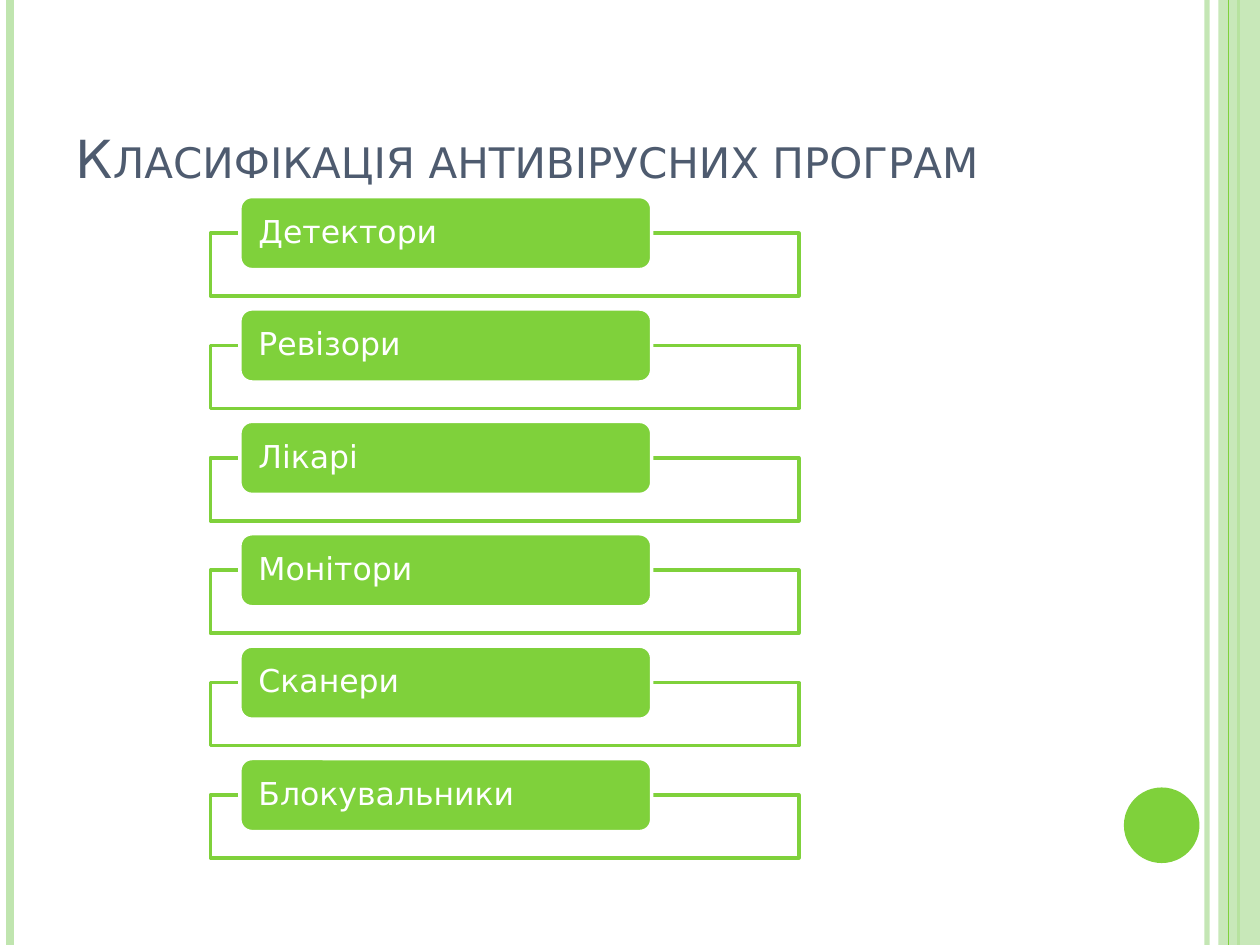
from lxml.etree import SubElement
from pptx import Presentation
from pptx.dml.color import RGBColor
from pptx.enum.shapes import MSO_CONNECTOR, MSO_SHAPE
from pptx.enum.text import MSO_ANCHOR, PP_ALIGN
from pptx.oxml.ns import qn
from pptx.util import Inches, Pt

GREEN = RGBColor(0x7F, 0xD1, 0x3B)
PALE_GREEN = RGBColor(0xC0, 0xE5, 0xAF)
SLATE = RGBColor(0x4E, 0x5B, 0x6F)
WHITE = RGBColor(0xFF, 0xFF, 0xFF)
FONT = "DejaVu Sans"
PROGRAM_TYPES = ["Детектори", "Ревізори", "Лікарі", "Монітори", "Сканери", "Блокувальники"]


def set_alpha(color_format_parent, percent):
    color = next(color_format_parent.iter(qn("a:srgbClr")))
    SubElement(color, qn("a:alpha")).set("val", str(percent * 1000))


def add_box(s, kind, left, top, width, height, fill, line=None, alpha=None):
    sp = s.shapes.add_shape(kind, Inches(left), Inches(top), Inches(width), Inches(height))
    sp.shadow.inherit = False
    sp.fill.solid()
    sp.fill.fore_color.rgb = fill
    if alpha:
        set_alpha(sp._element.spPr.find(qn("a:solidFill")), alpha)
    if line is None:
        sp.line.fill.background()
    else:
        sp.line.color.rgb = line
        sp.line.width = Pt(2)
    return sp


def add_stripe(s, x, height, color, weight, alpha=None):
    c = s.shapes.add_connector(MSO_CONNECTOR.STRAIGHT, Inches(x), 0, Inches(x), Inches(height))
    c.line.color.rgb = color
    c.line.width = Pt(weight)
    if alpha:
        set_alpha(c.line._ln, alpha)
    SubElement(c._element.spPr, qn("a:effectLst"))


def add_frame(s, width, height):
    add_stripe(s, width - 0.42, height, PALE_GREEN, 3, 93)
    add_stripe(s, 0.08, height, PALE_GREEN, 4.5)
    add_stripe(s, width - 0.17, height, GREEN, 1.5)
    add_box(s, MSO_SHAPE.RECTANGLE, width - 0.33, 0, 0.33, height, PALE_GREEN, alpha=87)
    add_stripe(s, width - 0.25, height, GREEN, 0.75)
    add_box(s, MSO_SHAPE.OVAL, width - 1.08, height - 1.25, 0.6, 0.6, GREEN)


def add_run(p, text, size, color):
    r = p.add_run()
    r.text = text
    r.font.name = FONT
    r.font.size = Pt(size)
    r.font.color.rgb = color
    return r


def set_title(s, text, left, top, width, height):
    sp = s.shapes.title
    sp.left, sp.top, sp.width, sp.height = map(Inches, (left, top, width, height))
    tf = sp.text_frame
    tf.word_wrap = True
    tf.vertical_anchor = MSO_ANCHOR.BOTTOM
    p = tf.paragraphs[0]
    p.alignment = PP_ALIGN.LEFT
    r = add_run(p, text, 30, SLATE)
    r.font._element.set("cap", "small")


def add_list(s, items, left, top, width, height):
    label_height, frame_height = 0.58, 0.5
    row_height = label_height / 2 + frame_height
    pitch = (height - row_height) / (len(items) - 1)
    for i, item in enumerate(items):
        y = top + i * pitch
        add_box(s, MSO_SHAPE.RECTANGLE, left, y + label_height / 2, width, frame_height,
                WHITE, GREEN, 90)
        label = add_box(s, MSO_SHAPE.ROUNDED_RECTANGLE, left + width * 0.05, y,
                        width * 0.7, label_height, GREEN, WHITE)
        tf = label.text_frame
        tf.word_wrap = True
        tf.vertical_anchor = MSO_ANCHOR.MIDDLE
        tf.margin_left = tf.margin_right = Inches(0.12)
        tf.margin_top = tf.margin_bottom = 0
        p = tf.paragraphs[0]
        p.alignment = PP_ALIGN.LEFT
        p.line_spacing = 0.9
        add_run(p, item, 18, WHITE)


def main():
    prs = Presentation()
    prs.slide_width, prs.slide_height = Inches(10), Inches(7.5)
    s = prs.slides.add_slide(prs.slide_layouts[5])
    add_frame(s, 10, 7.5)
    set_title(s, "Класифікація антивірусних програм", 0.5, 0.3, 8.17, 1.25)
    add_list(s, PROGRAM_TYPES, 1.67, 1.56, 4.67, 5.25)
    prs.save("out.pptx")


if __name__ == "__main__":
    main()
